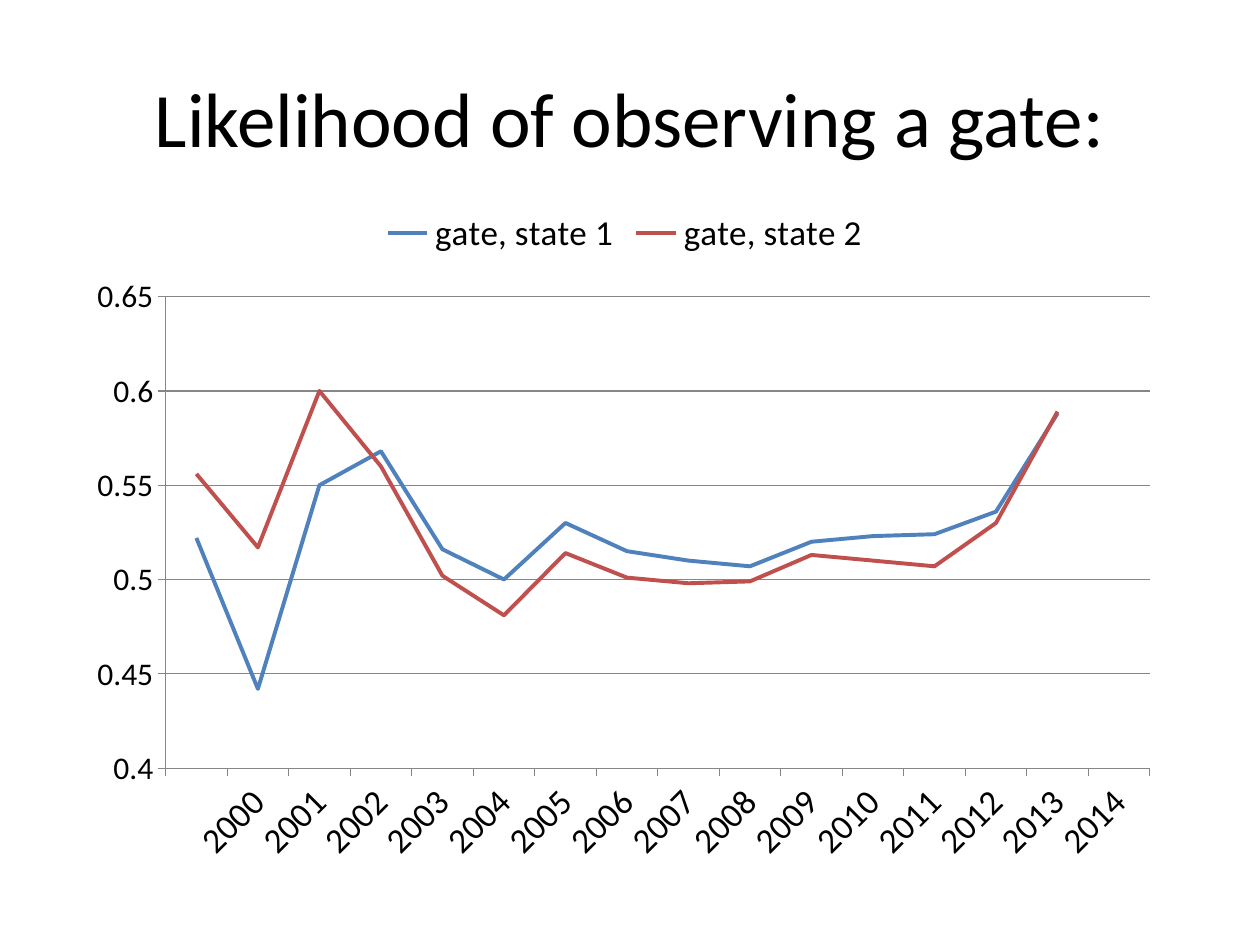
from dataclasses import dataclass

import pptx
import pptx.chart.data
import pptx.dml.color
import pptx.enum.chart
import pptx.enum.text
import pptx.oxml
import pptx.oxml.ns
import pptx.util

WIDE, HIGH = 10, 7.5
FONT, INK, GREY = "Calibri", "000000", "868686"


@dataclass
class Line:
    name: str
    hue: str
    vals: list[float]


LINES = [
    Line("gate, state 1", "4F81BD",
         [0.522, 0.442, 0.55, 0.568, 0.516, 0.5, 0.53, 0.515,
          0.51, 0.507, 0.52, 0.523, 0.524, 0.536, 0.588]),
    Line("gate, state 2", "C0504D",
         [0.556, 0.517, 0.6, 0.56, 0.502, 0.481, 0.514, 0.501,
          0.498, 0.499, 0.513, 0.51, 0.507, 0.53, 0.589]),
]
YEARS = [""] + [str(year) for year in range(2000, 2015)]


def color(code: str) -> pptx.dml.color.RGBColor:
    return pptx.dml.color.RGBColor.from_string(code)


def style(font, size: float, hue: str = INK) -> None:
    font.name = FONT
    font.size = pptx.util.Pt(size)
    font.color.rgb = color(hue)


def stroke(line, hue: str, width: float) -> None:
    line.color.rgb = color(hue)
    line.width = pptx.util.Pt(width)


def place(left: float, top: float, width: float, height: float) -> list[int]:
    """Turn shares of the slide into lengths."""
    return [pptx.util.Inches(share * size) for share, size in
            zip((left, top, width, height), (WIDE, HIGH, WIDE, HIGH))]


def write(shape, text: str, *, size: float, hue: str = INK) -> None:
    frame = shape.text_frame
    frame.word_wrap = True
    frame.vertical_anchor = pptx.enum.text.MSO_ANCHOR.MIDDLE
    para = frame.paragraphs[0]
    para.alignment = pptx.enum.text.PP_ALIGN.CENTER
    run = para.add_run()
    run.text = text
    style(run.font, size, hue)


def set_plot(chart, **shares: float) -> None:
    """Fix the inner plot area as shares of the chart."""
    area = chart.element.find(".//" + pptx.oxml.ns.qn("c:plotArea"))
    for old in area.findall(pptx.oxml.ns.qn("c:layout")):
        area.remove(old)
    modes = "".join(f'<c:{key}Mode val="edge"/>' for key in "xy")
    sizes = "".join(f'<c:{key} val="{val}"/>' for key, val in shares.items())
    area.insert(0, pptx.oxml.parse_xml(
        f'<c:layout {pptx.oxml.ns.nsdecls("c")}><c:manualLayout>'
        f'<c:layoutTarget val="inner"/>{modes}{sizes}'
        '</c:manualLayout></c:layout>'))


def set_axis(axis, size: float) -> None:
    axis.major_tick_mark = pptx.enum.chart.XL_TICK_MARK.OUTSIDE
    axis.minor_tick_mark = pptx.enum.chart.XL_TICK_MARK.NONE
    style(axis.tick_labels.font, size)
    stroke(axis.format.line, GREY, 0.75)


def turn_years(chart, angle: int) -> None:
    axis = chart.element.find(".//" + pptx.oxml.ns.qn("c:catAx"))
    body = axis.find(".//" + pptx.oxml.ns.qn("a:bodyPr"))
    body.set("rot", str(angle * 60000))
    body.set("vert", "horz")


def add_lines(slide) -> None:
    data = pptx.chart.data.CategoryChartData()
    data.categories = YEARS
    for line in LINES:
        data.add_series(line.name, line.vals)
    chart = slide.shapes.add_chart(
        pptx.enum.chart.XL_CHART_TYPE.LINE,
        *place(0.062, 0.207, 0.868, 0.713), data).chart
    chart.has_title = False
    style(chart.font, 10)
    set_plot(chart, x=0.08, y=0.15, w=0.9, h=0.7)

    chart.has_legend = True
    chart.legend.position = pptx.enum.chart.XL_LEGEND_POSITION.TOP
    chart.legend.include_in_layout = False
    style(chart.legend.font, 20)

    odds = chart.value_axis
    set_axis(chart.category_axis, 20)
    turn_years(chart, -45)
    set_axis(odds, 18)
    odds.minimum_scale, odds.maximum_scale, odds.major_unit = 0.4, 0.65, 0.05
    odds.tick_labels.number_format = "General"
    odds.tick_labels.number_format_is_linked = False
    odds.has_major_gridlines = True
    stroke(odds.major_gridlines.format.line, GREY, 0.75)

    plot = chart.plots[0]
    plot.vary_by_categories = False
    for series, line in zip(plot.series, LINES):
        series.smooth = False
        series.marker.style = pptx.enum.chart.XL_MARKER_STYLE.NONE
        stroke(series.format.line, line.hue, 2.25)


def main() -> None:
    deck = pptx.Presentation()
    deck.slide_width = pptx.util.Inches(WIDE)
    deck.slide_height = pptx.util.Inches(HIGH)
    slide = deck.slides.add_slide(deck.slide_layouts.get_by_name("Title Only"))
    title = slide.shapes.title
    title.left, title.top, title.width, title.height = place(
        0.05, 0.04, 0.9, 1 / 6)
    write(title, "Likelihood of observing a gate:", size=44)
    add_lines(slide)
    deck.save("out.pptx")


if __name__ == "__main__":
    main()
